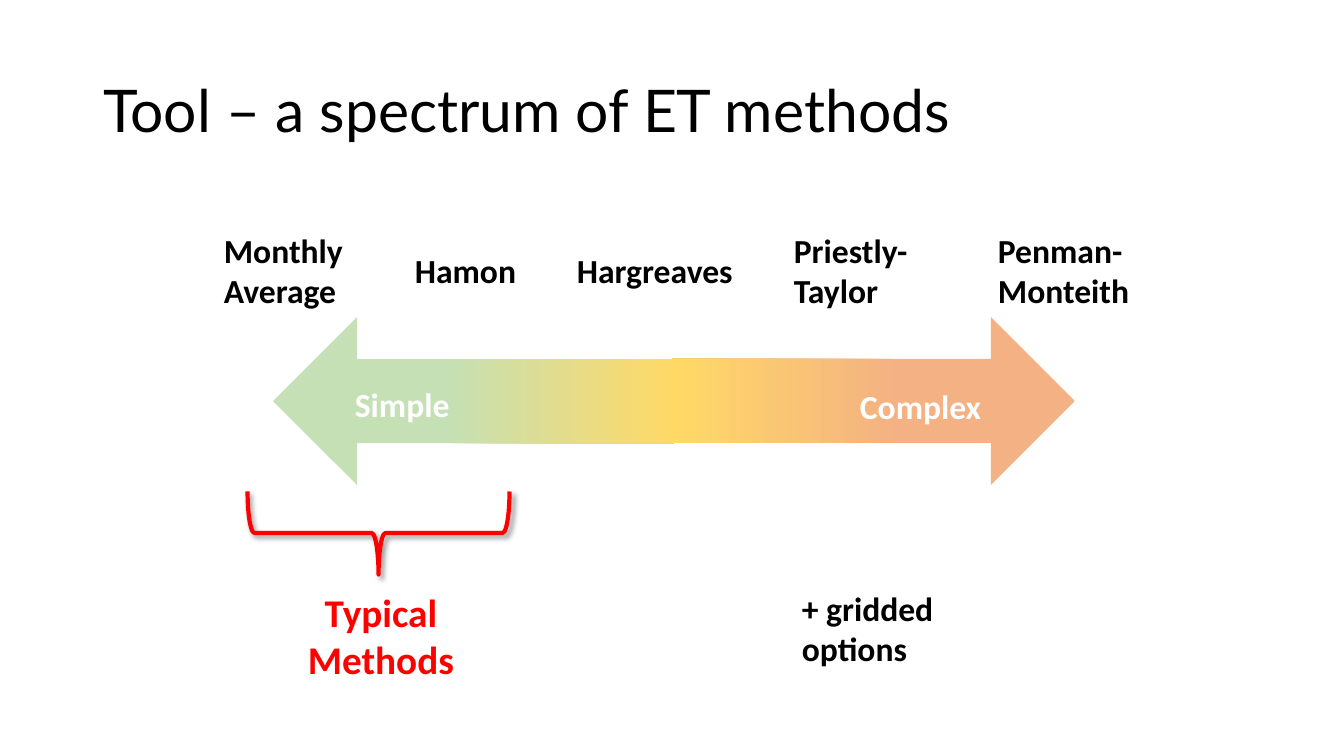
from lxml.etree import SubElement
from pptx import Presentation
from pptx.dml.color import RGBColor
from pptx.enum.shapes import MSO_SHAPE
from pptx.enum.text import MSO_ANCHOR, PP_ALIGN
from pptx.oxml import parse_xml
from pptx.oxml.ns import nsdecls, qn
from pptx.util import Emu, Pt

# Content: lengths in px, 100.8 px to the inch
COLORS = {"ink": "000000", "paper": "FFFFFF", "red": "FF0000",
          "simple": "C5E0B4", "middle": "FFD966", "complex": "F4B183"}
TITLE = ("Tool – a spectrum of ET methods", (93, 40, 1159, 146))
ARROWS = [  # outer color, rotation, area
    ("complex", 0, (672, 317, 403, 168)),
    ("simple", 180, (273, 317, 401, 168)),
]
LABELS = [  # text, color, area
    ("Monthly Average", "ink", (214, 225, 210, 92)),
    ("Hamon", "ink", (405, 245, 146, 50)),
    ("Hargreaves", "ink", (567, 245, 177, 50)),
    ("Priestly-Taylor", "ink", (784, 225, 194, 92)),
    ("Penman-Monteith", "ink", (988, 225, 226, 92)),
    ("Complex", "paper", (850, 381, 158, 50)),
    ("Simple", "paper", (345, 379, 122, 50)),
    ("+ gridded options", "ink", (792, 583, 227, 92)),
]
TYPICAL = ("Typical Methods", (284, 583, 194, 105))
BRACE = (337, 402, 83, 262)

SCALE = 914400 / 100.8


def px(*lengths):
    return [Emu(round(length * SCALE)) for length in lengths]


def rgb(name):
    return RGBColor.from_string(COLORS[name])


def write(frame, text, size, color, font="Calibri", bold=True, align=PP_ALIGN.LEFT):
    frame.word_wrap = True
    para = frame.paragraphs[0]
    para.alignment = align
    span = para.add_run()
    span.text = text
    span.font.name, span.font.size, span.font.bold = font, Pt(size), bold
    span.font.color.rgb = rgb(color)
    return para


def add_shape(kind, area, rotation=0):
    shape = page.shapes.add_shape(kind, *px(*area))
    shape.shadow.inherit = False
    shape.rotation = rotation
    shape.line.fill.background()
    return shape


deck = Presentation()
deck.slide_width, deck.slide_height = px(1344, 756)
page = deck.slides.add_slide(deck.slide_layouts[5])

# Title
title = page.shapes.title
title.left, title.top, title.width, title.height = px(*TITLE[1])
title.text_frame.vertical_anchor = MSO_ANCHOR.MIDDLE
write(title.text_frame, TITLE[0], 42, "ink", "Lato", False).line_spacing = 0.9

# Two arrows fading into the middle color
for color, rotation, area in ARROWS:
    arrow = add_shape(MSO_SHAPE.RIGHT_ARROW, area, rotation)
    arrow.fill.gradient()
    arrow.fill.gradient_angle = 180
    for stop, (name, position) in zip(arrow.fill.gradient_stops,
                                      [(color, 0.43), ("middle", 1)]):
        stop.color.rgb = rgb(name)
        stop.position = position

# Method names and arrow labels
for text, color, area in LABELS:
    box = page.shapes.add_textbox(*px(*area))
    write(box.text_frame, text, 24, color)

# Typical methods on a half-transparent panel
panel = add_shape(MSO_SHAPE.RECTANGLE, TYPICAL[1])
panel.fill.solid()
panel.fill.fore_color.rgb = rgb("paper")
paper = panel._element.spPr.find(qn("a:solidFill"))[0]
SubElement(paper, qn("a:alpha"), val="50000")
panel.text_frame.vertical_anchor = MSO_ANCHOR.TOP
write(panel.text_frame, TYPICAL[0], 28, "red", align=PP_ALIGN.CENTER)

# Brace with a soft shadow
brace = add_shape(MSO_SHAPE.RIGHT_BRACE, BRACE, 90)
brace.fill.background()
brace.line.color.rgb = rgb("red")
brace.line.width = Pt(3)
brace._element.spPr.find(qn("a:effectLst")).append(parse_xml(
    f'<a:outerShdw {nsdecls("a")} blurRad="{Pt(4)}" dist="{Pt(3)}" dir="2700000" '
    f'algn="tl" rotWithShape="0"><a:srgbClr val="{COLORS["ink"]}">'
    '<a:alpha val="40000"/></a:srgbClr></a:outerShdw>'))

deck.save("out.pptx")
